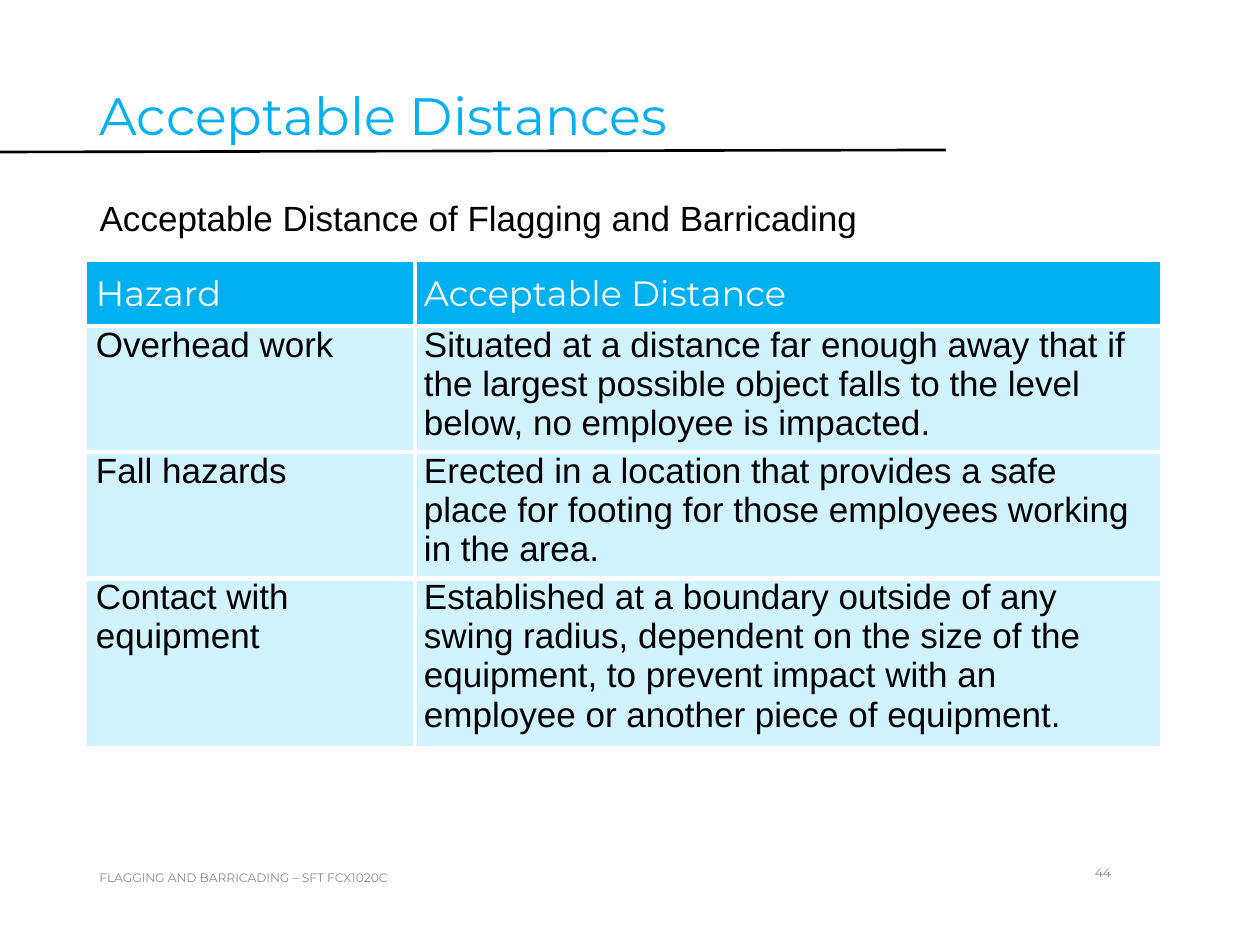
"""Build the slide on acceptable distances for flagging and barricading."""
from dataclasses import dataclass

from lxml import etree
from pptx import Presentation, util as u
from pptx.dml.color import RGBColor
from pptx.enum import shapes, text
from pptx.oxml import ns

TITLE = "Acceptable Distances"
INTRO = "Acceptable Distance of Flagging and Barricading"
FOOTER = "FLAGGING AND BARRICADING – SFT FCX1020C"
PAGE = "44"
HAZARDS = [
    ("Hazard", "Acceptable Distance"),
    ("Overhead work",
     "Situated at a distance far enough away that if the largest possible object "
     "falls to the level below, no employee is impacted."),
    ("Fall hazards",
     "Erected in a location that provides a safe place for footing for those "
     "employees working in the area."),
    ("Contact with equipment",
     "Established at a boundary outside of any swing radius, dependent on the size "
     "of the equipment, to prevent impact with an employee or another piece of equipment."),
]

SLIDE = (1260, 945)
LEFT = 87
TITLE_BOX = (LEFT, 84, 859, 90)
INTRO_BOX = (LEFT, 190, 859, 646)
PAGE_BOX = (946, 848, 314, 50)
FOOTER_BOX = (LEFT, 853, 756, 50)
RULE = (0, 152, 946, 150)
TABLE_TOP = 262
COLUMNS = (328, 745)
ROWS = (64, 117, 121, 156)
CELL_INSET = 9


@dataclass(frozen=True)
class Theme:
    heading: str = "Montserrat"
    body: str = "Arial"
    accent: str = "00B0F0"
    band: str = "D1F3FF"
    ink: str = "000000"
    paper: str = "FFFFFF"
    page: str = "898989"
    footer: str = "8C8C8C"
    title_size: float = 30
    body_size: float = 20
    small_size: float = 7
    rule_width: float = 1.5
    border_width: float = 3


THEME = Theme()


def px(length):
    return round(length * 914400 / 126)


def place(part, box):
    part.left, part.top, part.width, part.height = map(px, box)


def write(frame, wording, font, size, color, before=0, after=0,
          align=text.PP_ALIGN.LEFT):
    paragraph = frame.paragraphs[0]
    paragraph.alignment = align
    paragraph.space_before, paragraph.space_after = u.Pt(before), u.Pt(after)
    run = paragraph.add_run()
    run.text = wording
    run.font.name, run.font.size, run.font.bold = font, u.Pt(size), False
    run.font.color.rgb = RGBColor.from_string(color)
    return paragraph


def set_border(cell, side, visible):
    line = etree.SubElement(cell._tc.get_or_add_tcPr(), ns.qn(f"a:ln{side}"),
                            w=str(u.Pt(THEME.border_width) if visible else 0))
    if visible:
        fill = etree.SubElement(line, ns.qn("a:solidFill"))
        etree.SubElement(fill, ns.qn("a:srgbClr"), val=THEME.paper)
    else:
        etree.SubElement(line, ns.qn("a:noFill"))


def add_headings(slide):
    title, intro = slide.shapes.title, slide.placeholders[1]
    for part, box in ((title, TITLE_BOX), (intro, INTRO_BOX)):
        place(part, box)
        part.text_frame.vertical_anchor = text.MSO_ANCHOR.TOP
        part.text_frame.auto_size = text.MSO_AUTO_SIZE.NONE
    heading = write(title.text_frame, TITLE, THEME.heading, THEME.title_size,
                    THEME.accent, before=10)
    heading.line_spacing = 0.9
    lead = write(intro.text_frame, INTRO, THEME.body, THEME.body_size,
                 THEME.ink, before=6, after=6)
    properties = lead._p.get_or_add_pPr()
    properties.set("marL", "0")
    properties.set("indent", "0")
    etree.SubElement(properties, ns.qn("a:buNone"))


def add_rule(slide):
    rule = slide.shapes.add_connector(shapes.MSO_CONNECTOR.STRAIGHT, *map(px, RULE))
    rule.line.color.rgb = RGBColor.from_string(THEME.ink)
    rule.line.width = u.Pt(THEME.rule_width)
    etree.SubElement(rule._element.spPr, ns.qn("a:effectLst"))


def add_small_print(slide, wording, box, color, align):
    frame = slide.shapes.add_textbox(*map(px, box)).text_frame
    frame.word_wrap = True
    frame.vertical_anchor = text.MSO_ANCHOR.MIDDLE
    write(frame, wording, THEME.heading, THEME.small_size, color, align=align)


def add_hazards(slide):
    box = (LEFT, TABLE_TOP, sum(COLUMNS), sum(ROWS))
    table = slide.shapes.add_table(len(ROWS), len(COLUMNS), *map(px, box)).table
    table.horz_banding = False
    for column, width in zip(table.columns, COLUMNS):
        column.width = px(width)
    for r, (height, entries) in enumerate(zip(ROWS, HAZARDS)):
        table.rows[r].height = px(height)
        header = r == 0
        font, ink, fill = ((THEME.heading, THEME.paper, THEME.accent) if header
                           else (THEME.body, THEME.ink, THEME.band))
        for c, wording in enumerate(entries):
            cell = table.cell(r, c)
            cell.margin_left = cell.margin_right = px(CELL_INSET)
            cell.margin_top = cell.margin_bottom = 0
            cell.vertical_anchor = text.MSO_ANCHOR.MIDDLE if header else text.MSO_ANCHOR.TOP
            inner = {"L": c > 0, "R": c < len(COLUMNS) - 1,
                     "T": r > 0, "B": r < len(ROWS) - 1}
            for side, visible in inner.items():
                set_border(cell, side, visible)
            cell.fill.solid()
            cell.fill.fore_color.rgb = RGBColor.from_string(fill)
            write(cell.text_frame, wording, font, THEME.body_size, ink, before=2, after=2)


def main():
    deck = Presentation()
    deck.slide_width, deck.slide_height = map(px, SLIDE)
    slide = deck.slides.add_slide(deck.slide_layouts[1])
    add_headings(slide)
    add_rule(slide)
    add_small_print(slide, PAGE, PAGE_BOX, THEME.page, text.PP_ALIGN.CENTER)
    add_small_print(slide, FOOTER, FOOTER_BOX, THEME.footer, text.PP_ALIGN.LEFT)
    add_hazards(slide)
    deck.save("out.pptx")


if __name__ == "__main__":
    main()
